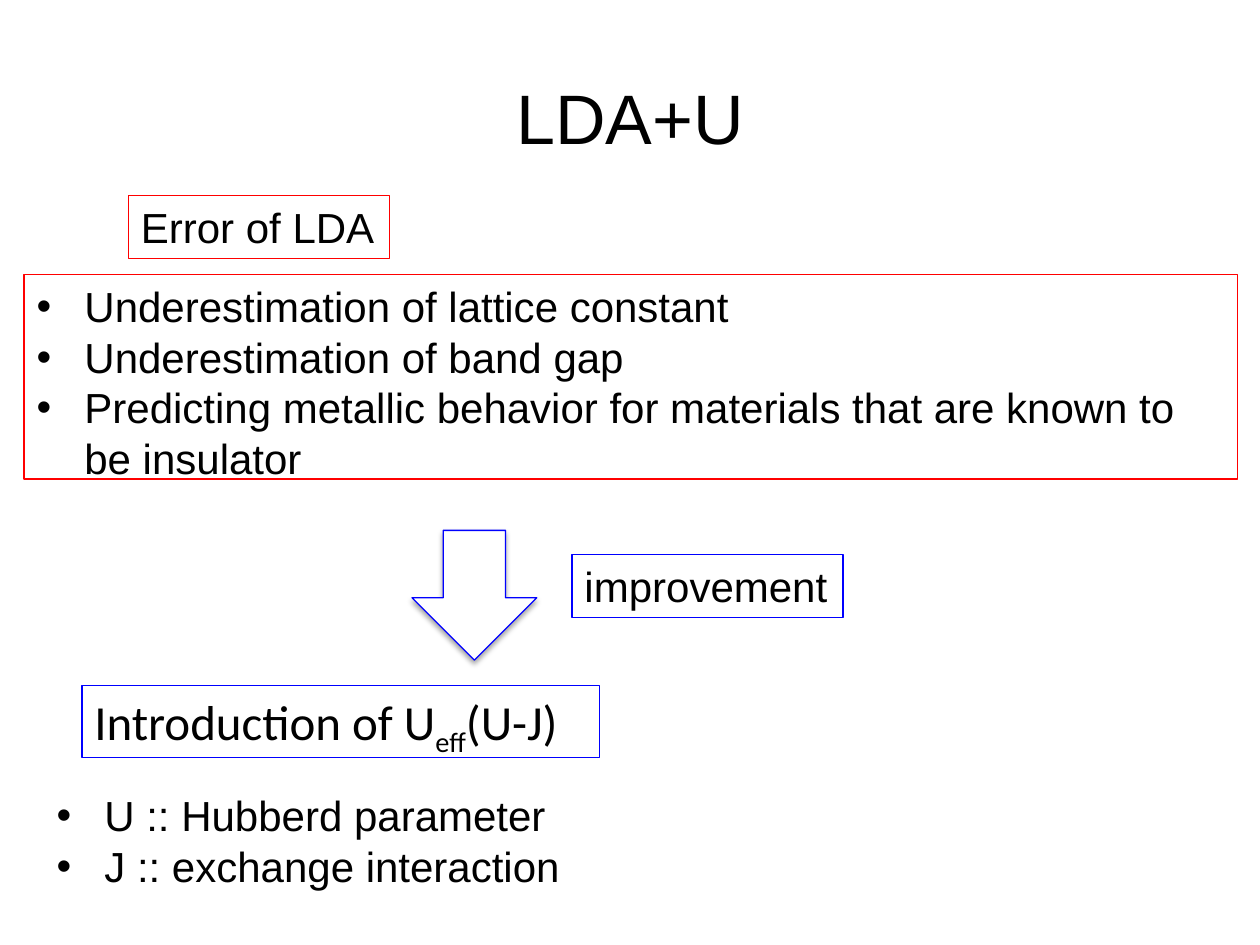
from pptx import Presentation
from pptx.dml.color import RGBColor
from pptx.enum.shapes import MSO_SHAPE as Shape
from pptx.enum.text import MSO_ANCHOR as Anchor, MSO_AUTO_SIZE as AutoSize, PP_ALIGN as Align
from pptx.oxml import parse_xml
from pptx.oxml.ns import nsdecls
from pptx.util import Inches, Pt

BLACK, WHITE, RED, BLUE = "000000", "FFFFFF", "FF0000", "0000FF"
BULLET_INDENT = Inches(0.38)


def color(value):
    return RGBColor.from_string(value)


def place(shape, left, top, width, height):
    shape.left, shape.top = Inches(left), Inches(top)
    shape.width, shape.height = Inches(width), Inches(height)


def outline(shape, line, fill=None):
    if fill:
        shape.fill.solid()
        shape.fill.fore_color.rgb = color(fill)
    shape.line.color.rgb = color(line)
    shape.line.width = Pt(0.75)


def format_runs(paragraph, size, font="Arial"):
    for run in paragraph.runs:
        run.font.size = Pt(size)
        run.font.name = font
        run.font.color.rgb = color(BLACK)


def fill_title(shape, text):
    place(shape, 0.5, 0.3, 9, 1.25)
    frame = shape.text_frame
    frame.text = text
    frame.vertical_anchor = Anchor.MIDDLE
    frame.paragraphs[0].alignment = Align.CENTER
    format_runs(frame.paragraphs[0], 40)


def fill_list(shape, items):
    frame = shape.text_frame
    frame.word_wrap = True
    frame.auto_size = AutoSize.SHAPE_TO_FIT_TEXT
    frame.text = "\n".join(items)
    for paragraph in frame.paragraphs:
        paragraph.space_before = Pt(0)
        format_runs(paragraph, 24)
        properties = paragraph._p.get_or_add_pPr()
        properties.set("marL", str(BULLET_INDENT))
        properties.set("indent", str(-BULLET_INDENT))
        properties.append(parse_xml(f'<a:buFont {nsdecls("a")} typeface="Arial"/>'))
        properties.append(parse_xml(f'<a:buChar {nsdecls("a")} char="•"/>'))


def add_text_box(slide, box):
    return slide.shapes.add_textbox(*map(Inches, box))


def add_label(slide, box, text, line, fill=None):
    label = add_text_box(slide, box)
    outline(label, line, fill)
    frame = label.text_frame
    frame.word_wrap = False
    frame.auto_size = AutoSize.SHAPE_TO_FIT_TEXT
    frame.text = text
    format_runs(frame.paragraphs[0], 24)


def add_down_arrow(slide, box):
    arrow = slide.shapes.add_shape(Shape.DOWN_ARROW, *map(Inches, box))
    outline(arrow, BLUE, WHITE)
    arrow._element.spPr.append(parse_xml(
        f'<a:effectLst {nsdecls("a")}>'
        f'<a:outerShdw blurRad="{Pt(3.1)}" dist="{Pt(1.8)}" dir="5400000" rotWithShape="0">'
        f'<a:srgbClr val="{BLACK}"><a:alpha val="35000"/></a:srgbClr>'
        '</a:outerShdw></a:effectLst>'))


def add_formula(slide, box, before, subscript, after):
    formula = add_text_box(slide, box)
    outline(formula, BLUE)
    frame = formula.text_frame
    frame.word_wrap = True
    frame.auto_size = AutoSize.SHAPE_TO_FIT_TEXT
    paragraph = frame.paragraphs[0]
    for text in (before, subscript, after):
        paragraph.add_run().text = text
    format_runs(paragraph, 28, "Calibri")
    paragraph.runs[1].font._element.set("baseline", "-25000")


def main():
    presentation = Presentation()
    presentation.slide_width, presentation.slide_height = Inches(10), Inches(7.5)
    slide = presentation.slides.add_slide(presentation.slide_layouts[1])

    fill_title(slide.shapes.title, "LDA+U")

    errors = slide.placeholders[1]
    place(errors, 0.19, 2.18, 9.63, 1.72)
    outline(errors, RED, WHITE)
    fill_list(errors, [
        "Underestimation of lattice constant",
        "Underestimation of band gap",
        "Predicting metallic behavior for materials that are known to be insulator",
    ])
    add_label(slide, (1.02, 1.55, 2.07, 0.5), "Error of LDA", RED, WHITE)

    add_down_arrow(slide, (3.27, 4.21, 0.99, 1.03))
    add_label(slide, (4.54, 4.4, 2.15, 0.5), "improvement", BLUE)

    parameters = add_text_box(slide, (0.35, 6.22, 8.85, 0.91))
    fill_list(parameters, ["U :: Hubberd parameter", "J :: exchange interaction"])
    add_formula(slide, (0.65, 5.44, 4.11, 0.57), "Introduction of U", "eff", "(U-J)")

    presentation.save("out.pptx")


if __name__ == "__main__":
    main()
